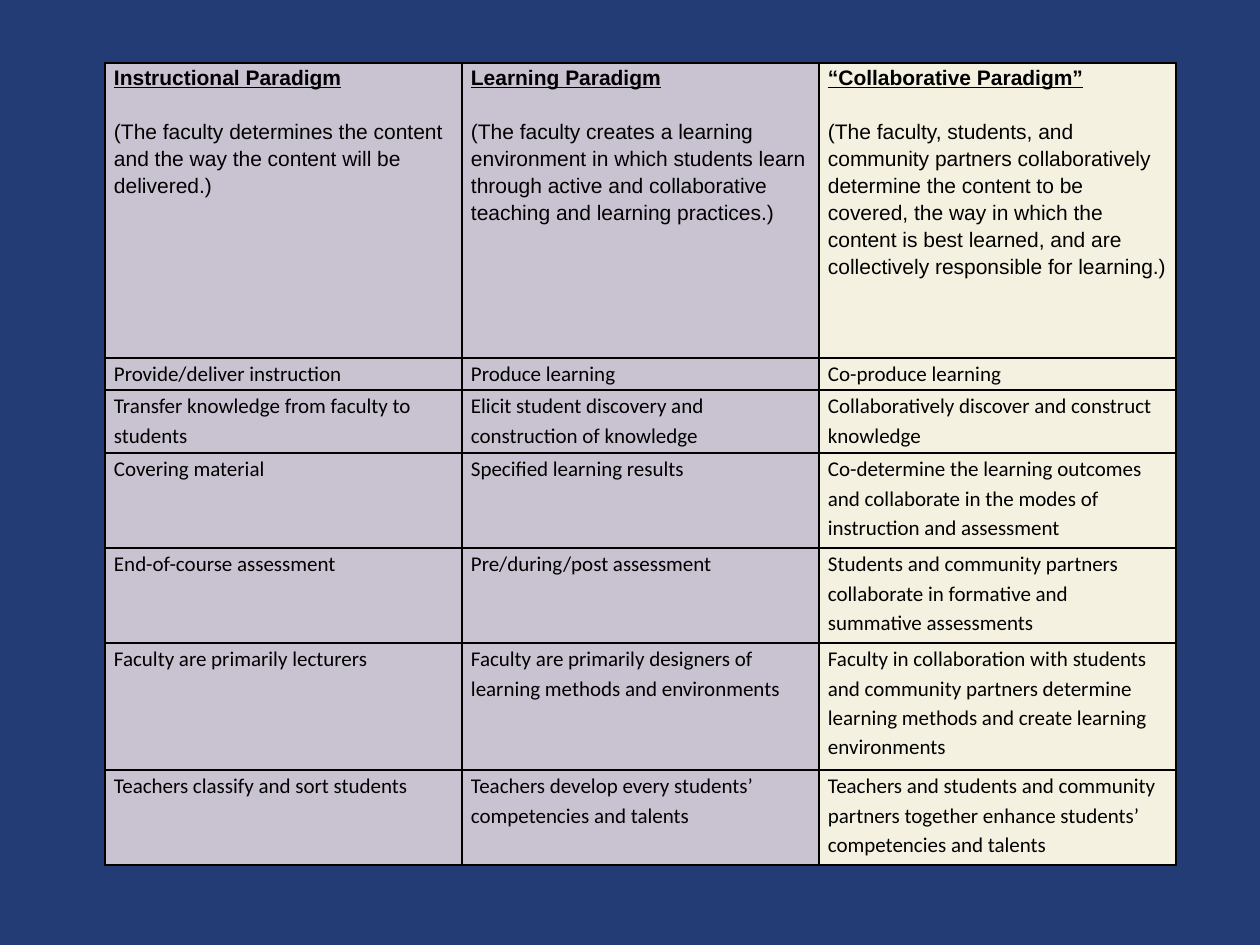
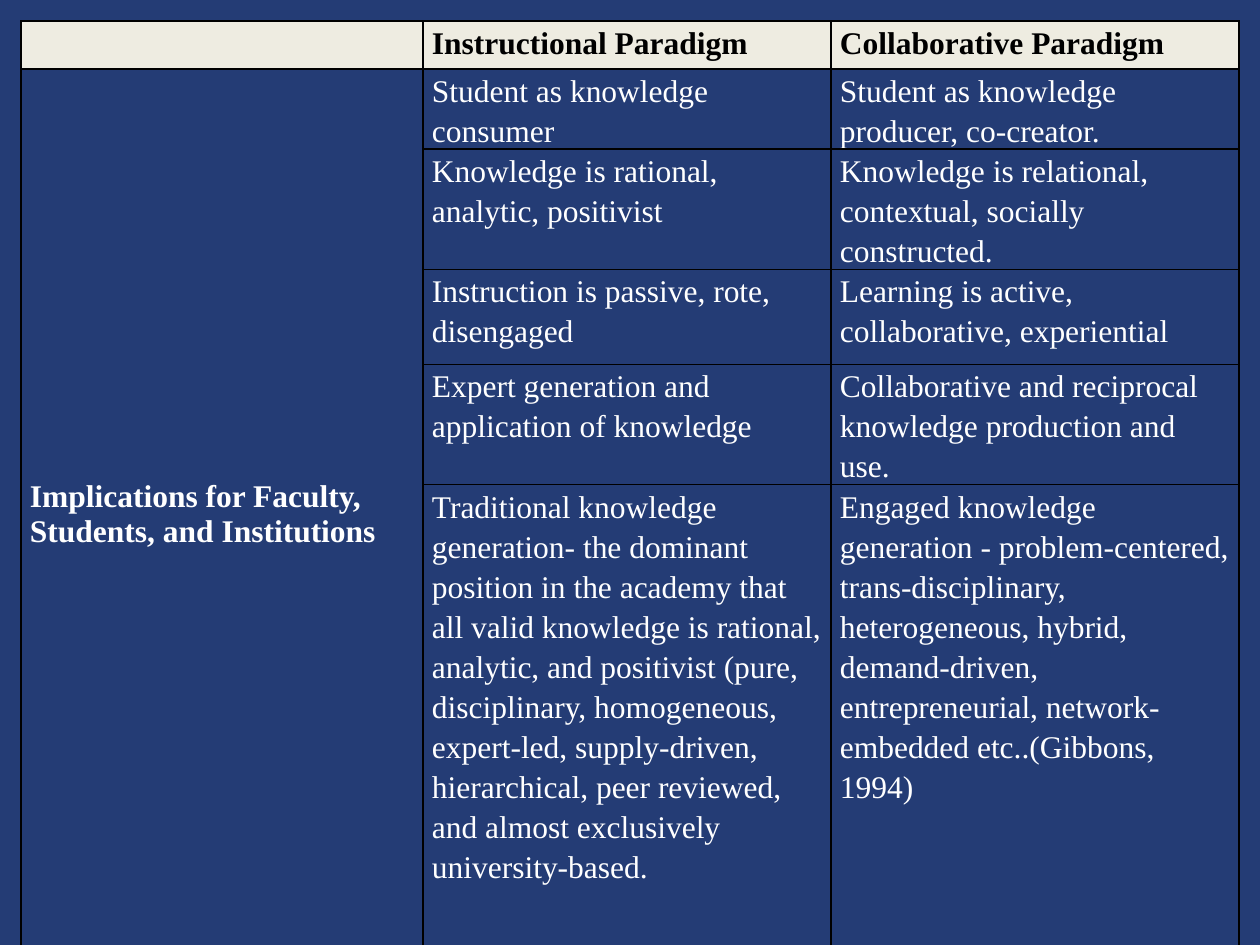
from lxml.etree import SubElement
from pptx import Presentation
from pptx.dml.color import RGBColor as RGB
from pptx.enum.text import MSO_ANCHOR as ANCHOR
from pptx.oxml.ns import qn
from pptx.util import Pt

PX = 914400 / 126
NAVY = RGB(0x24, 0x3C, 0x75)
LILAC = RGB(0xC9, 0xC2, 0xD1)
CREAM = RGB(0xF5, 0xF1, 0xE0)
IVORY = RGB(0xEE, 0xEC, 0xE1)
BLACK = RGB(0, 0, 0)
WHITE = RGB(255, 255, 255)


def add_grid(left, top, cols, rows):
    """Add a slide with one bare table; sizes are in px."""
    slide = deck.slides.add_slide(deck.slide_layouts[6])
    box = [round(n * PX) for n in (left, top, sum(cols), sum(rows))]
    grid = slide.shapes.add_table(len(rows), len(cols), *box).table
    grid.first_row = grid.horz_banding = False
    for col, size in zip(grid.columns, cols):
        col.width = round(size * PX)
    for row, size in zip(grid.rows, rows):
        row.height = round(size * PX)
    return grid


def fill_cell(cell, text, font, size, ink, back=None, bold=False):
    """Write the text of a cell and set its margins, borders and fill."""
    cell.margin_left = cell.margin_right = round(9 * PX)
    cell.margin_top = cell.margin_bottom = 0
    props = cell._tc.get_or_add_tcPr()
    for side in ("a:lnL", "a:lnR", "a:lnT", "a:lnB"):
        line = SubElement(props, qn(side), w=str(Pt(1)))
        solid = SubElement(line, qn("a:solidFill"))
        SubElement(solid, qn("a:srgbClr"), val=str(BLACK))
    if back is None:
        cell.fill.background()
    else:
        cell.fill.solid()
        cell.fill.fore_color.rgb = back
    cell.text_frame.text = text
    for para in cell.text_frame.paragraphs:
        para.line_spacing = 1.15
        para.font.size = Pt(size)
        for run in para.runs:
            run.font.name = font
            run.font.size = Pt(size)
            run.font.bold = bold
            run.font.color.rgb = ink


deck = Presentation()
deck.slide_width = round(1260 * PX)
deck.slide_height = round(945 * PX)
back = deck.slide_master.background.fill
back.solid()
back.fore_color.rgb = NAVY

# Slide 1: three paradigms side by side
heads = [
    ("Instructional Paradigm",
     "(The faculty determines the content and the way the content will be delivered.)"),
    ("Learning Paradigm",
     "(The faculty creates a learning environment in which students learn through "
     "active and collaborative teaching and learning practices.)"),
    ("“Collaborative Paradigm”",
     "(The faculty, students, and community partners collaboratively determine the "
     "content to be covered, the way in which the content is best learned, and are "
     "collectively responsible for learning.)"),
]
traits = [
    ("Provide/deliver instruction", "Produce learning", "Co-produce learning"),
    ("Transfer knowledge from faculty to students",
     "Elicit student discovery and construction of knowledge",
     "Collaboratively discover and construct knowledge"),
    ("Covering material", "Specified learning results",
     "Co-determine the learning outcomes and collaborate in the modes of "
     "instruction and assessment"),
    ("End-of-course assessment", "Pre/during/post assessment",
     "Students and community partners collaborate in formative and summative "
     "assessments"),
    ("Faculty are primarily lecturers",
     "Faculty are primarily designers of learning methods and environments",
     "Faculty in collaboration with students and community partners determine "
     "learning methods and create learning environments"),
    ("Teachers classify and sort students",
     "Teachers develop every students’ competencies and talents",
     "Teachers and students and community partners together enhance students’ "
     "competencies and talents"),
]
tints = [LILAC, LILAC, CREAM]
grid = add_grid(105, 63, [357] * 3, [295, 32, 63, 95, 95, 127, 95])
for c, (head, tint) in enumerate(zip(heads, tints)):
    cell = grid.cell(0, c)
    fill_cell(cell, "\n".join(head), "Arial", 12, BLACK, tint)
    title, note = cell.text_frame.paragraphs
    title.runs[0].font.bold = title.runs[0].font.underline = True
    note.space_before = Pt(15.5)
    for r, trait in enumerate(traits, 1):
        fill_cell(grid.cell(r, c), trait[c], "Calibri", 12, BLACK, tint)

# Slide 2: implications of two paradigms
SERIF = "Times New Roman"
pairs = [
    ("Student as knowledge consumer", "Student as knowledge producer, co-creator."),
    ("Knowledge is rational, analytic, positivist",
     "Knowledge is relational, contextual, socially constructed."),
    ("Instruction is passive, rote, disengaged",
     "Learning is active, collaborative, experiential"),
    ("Expert generation and application of knowledge",
     "Collaborative and reciprocal knowledge production and use."),
    ("Traditional knowledge generation- the dominant position in the academy that "
     "all valid knowledge is rational, analytic, and positivist (pure, disciplinary, "
     "homogeneous, expert-led, supply-driven, hierarchical, peer reviewed, and almost "
     "exclusively university-based.",
     "Engaged knowledge generation - problem-centered, trans-disciplinary, "
     "heterogeneous, hybrid, demand-driven, entrepreneurial, network-embedded "
     "etc..(Gibbons, 1994)"),
]
grid = add_grid(21, 21, [402, 408, 408], [48, 48, 95, 95, 95, 475])
for c, text in enumerate(["", "Instructional Paradigm", "Collaborative Paradigm"]):
    fill_cell(grid.cell(0, c), text, SERIF, 18, BLACK, IVORY, bold=True)
for r, pair in enumerate(pairs, 1):
    for c, text in enumerate(pair, 1):
        fill_cell(grid.cell(r, c), text, SERIF, 18, WHITE)
    fill_cell(grid.cell(r, 0), "", SERIF, 18, WHITE)
side = grid.cell(1, 0)
side.merge(grid.cell(len(pairs), 0))
side.vertical_anchor = ANCHOR.MIDDLE
side.text_frame.text = "Implications for Faculty, Students, and Institutions"
font = side.text_frame.paragraphs[0].runs[0].font
font.name, font.size, font.bold = SERIF, Pt(18), True
font.color.rgb = WHITE

deck.save("out.pptx")
